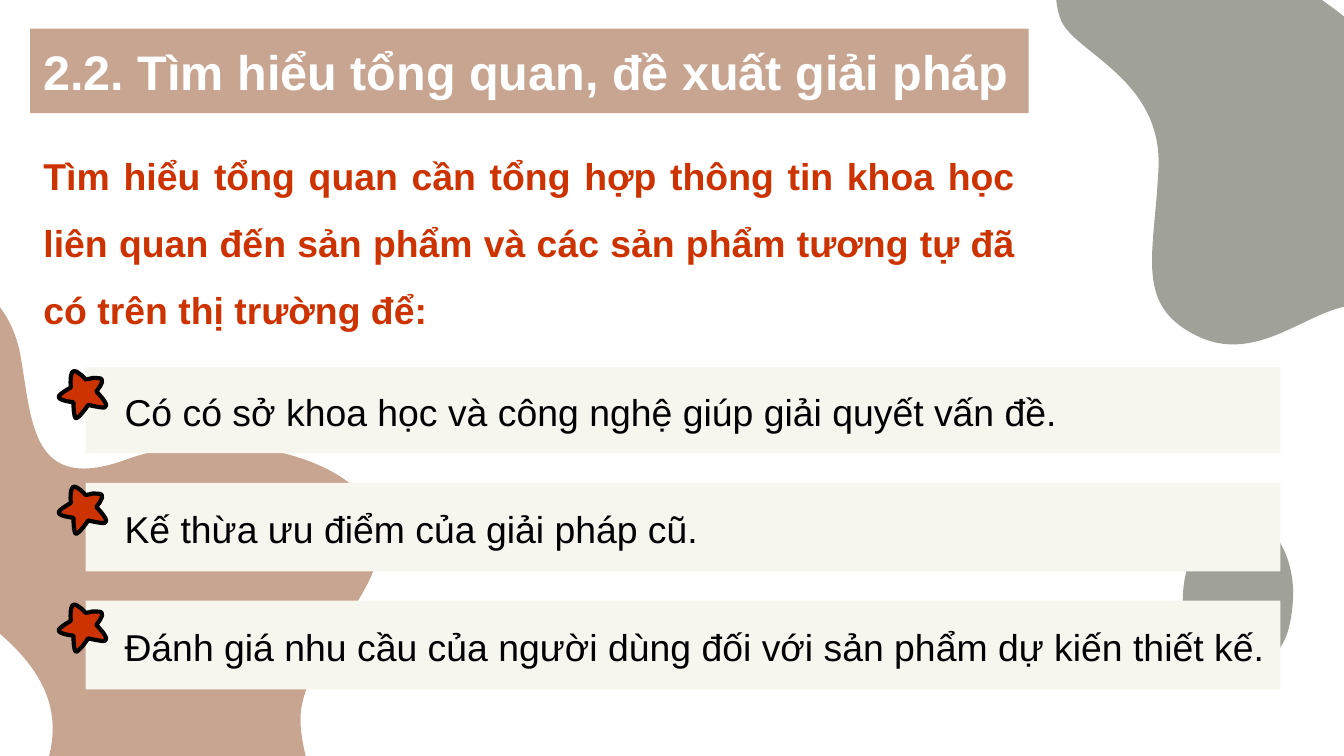
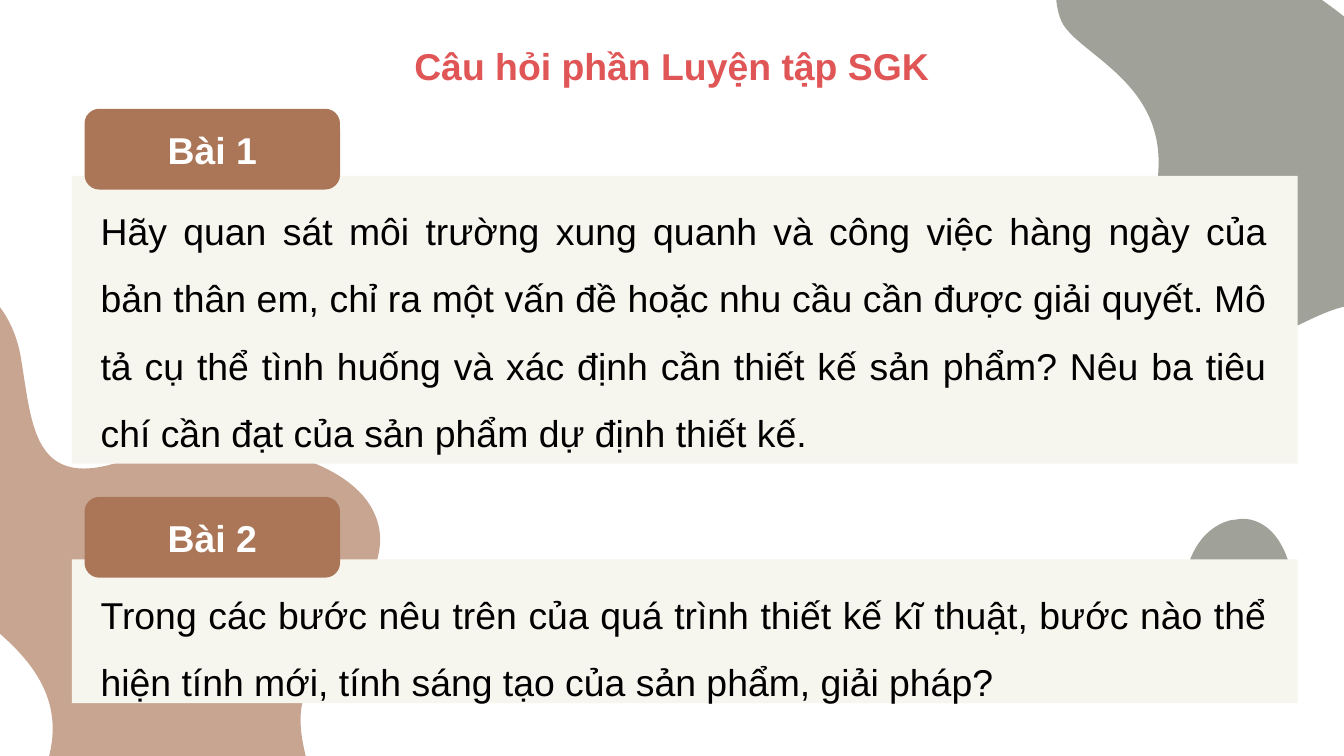
from math import cos, radians, sin
from lxml import etree
from pptx import Presentation, util as u
from pptx.dml.color import RGBColor
from pptx.enum import shapes as sh, text as tx
from pptx.oxml.ns import qn

WIDE = u.Inches(10)
HIGH = WIDE * 9 // 16
CELL = WIDE // 100
FONT = "Arial"

WHITE = RGBColor(0xFF, 0xFF, 0xFF)
BLACK = RGBColor(0, 0, 0)
TAN = RGBColor(0xC8, 0xA5, 0x91)
SAGE = RGBColor(0xA0, 0xA2, 0x99)
CREAM = RGBColor(0xF6, 0xF5, 0xEE)
RUST = RGBColor(0xCC, 0x33, 0x00)
CORAL = RGBColor(0xE0, 0x56, 0x56)
BROWN = RGBColor(0xAB, 0x76, 0x58)
EDGE = RGBColor(0xAB, 0x76, 0x57)

BLOBS = [
    (SAGE, (70.7, -1.8, 45.5, 28), 222.8, (78.9, 1.4), [
        (79.8, 3.9, 86.5, 5.8, 86.2, 12.5), (85.9, 19.1, 84.3, 22.8, 89.3, 25.1),
        (94.3, 27.3, 98.3, 21.8, 102.1, 22.8), (105.8, 23.8, 117.1, 20.2, 109.2, 10.3),
        (101.4, 0.5, 90.2, -6.2, 84.4, -5.7), (78.6, -5.3, 78, -1.1, 78.9, 1.4)]),
    (TAN, (-20.1, 20.2, 51.2, 46.5), 11.2, (1.6, 26.9), [
        (2.4, 31.7, 2.5, 36.7, 9.4, 34.2), (16.2, 31.7, 26, 33.7, 27.9, 38.3),
        (29.9, 42.8, 23.6, 47.4, 22.5, 52.3), (21.4, 57.1, 27.6, 63.9, 21.1, 66.4),
        (14.7, 69, 0.5, 64.5, 3.3, 57.4), (6, 50.2, -0.6, 46.6, -6.3, 42.5),
        (-12, 38.3, -17.1, 26.3, -10.2, 22.2), (-3.2, 18.1, 0.9, 22, 1.6, 26.9)]),
    (SAGE, (88, 38.6, 8.5, 11.1), 0, (92.4, 38.6), [
        (92.2, 38.6, 91.9, 38.7, 91.6, 38.7), (89.2, 39.3, 88, 41.9, 88, 44.8),
        (88, 47.8, 89.9, 49.5, 92.2, 49.7), (95.1, 49.5, 96, 47.7, 96.2, 44.7),
        (96.4, 42, 95.1, 38.6, 92.4, 38.6)]),
]
STAR = (-2.1, 0.2, 3.6, 3.5), 351.5, (-0.9, 0.3), [
    (-0.9, 0.3, -0.9, 0.3, -0.9, 0.3),
    (-1.2, 0.4, -1.1, 1.5, -1.1, 1.5), (-1.1, 1.5, -2, 2, -2, 2.2),
    (-2, 2.5, -0.9, 2.6, -0.9, 2.6), (-0.9, 2.6, -0.9, 3.8, -0.7, 3.8),
    (-0.7, 3.8, -0.7, 3.8, -0.7, 3.8),
    (-0.4, 3.7, 0.2, 2.8, 0.2, 2.8), (0.2, 2.8, 1, 3, 1.4, 3),
    (1.5, 2.9, 1.5, 2.9, 1.5, 2.9), (1.7, 2.7, 0.8, 1.8, 0.8, 1.8),
    (0.8, 1.8, 1.4, 1.1, 1.2, 0.9), (1.2, 0.8, 0.8, 0.8, 0.5, 0.8),
    (0.2, 0.9, 0, 0.9, 0, 0.9), (0, 0.9, -0.6, 0.2, -0.9, 0.3)]

HEAD = (2.25, 2.13, 74.3, 6.3)
INTRO = (2.25, 9.2, 74.3, 15.5)
AIMS = [
    (27.33, 6.4, 79.3, "Có có sở khoa học và công nghệ giúp giải quyết vấn đề."),
    (35.93, 6.6, 52, "Kế thừa ưu điểm của giải pháp cũ."),
    (44.7, 6.6, 87.7,
     "Đánh giá nhu cầu của người dùng đối với sản phẩm dự kiến thiết kế."),
]
TASKS = [
    ((5.35, 13.1, 91.2, 21.4), 8.25, "Bài 1",
     "Hãy quan sát môi trường xung quanh và công việc hàng ngày của bản thân em, "
     "chỉ ra một vấn đề hoặc nhu cầu cần được giải quyết. Mô tả cụ thể tình huống "
     "và xác định cần thiết kế sản phẩm? Nêu ba tiêu chí cần đạt của sản phẩm dự "
     "định thiết kế."),
    ((5.35, 41.63, 91.2, 10.7), 37.13, "Bài 2",
     "Trong các bước nêu trên của quá trình thiết kế kĩ thuật, bước nào thể hiện "
     "tính mới, tính sáng tạo của sản phẩm, giải pháp?"),
]


def place(box):
    """Turn a box in grid cells into slide lengths."""
    return [round(n * CELL) for n in box]


def paint(shape, fill, line=None):
    """Give a shape its fill and its outline, if any."""
    shape.shadow.inherit = False
    shape.fill.solid()
    shape.fill.fore_color.rgb = fill
    if line is None:
        shape.line.fill.background()
    else:
        shape.line.color.rgb = line
        shape.line.width = u.Pt(2.25)
    return shape


def panel(slide, box, fill, kind=sh.MSO_SHAPE.RECTANGLE, line=None):
    """Add a filled preset shape."""
    return paint(slide.shapes.add_shape(kind, *place(box)), fill, line)


def write(shape, words, color, size=20, bold=False,
          align=tx.PP_ALIGN.LEFT, gap=None):
    """Set the one paragraph of a shape."""
    frame = shape.text_frame
    frame.word_wrap = True
    frame.text = words
    para = frame.paragraphs[0]
    para.alignment = align
    para.line_spacing = gap
    font = para.runs[0].font
    font.name, font.size, font.bold = FONT, u.Pt(size), bold
    font.color.rgb = color
    return frame


def label(slide, box, words, color, **style):
    """Add a text box."""
    return write(slide.shapes.add_textbox(*place(box)), words, color, **style)


def center(frame, inset=None):
    """Anchor text in the middle, with equal insets if given."""
    frame.vertical_anchor = tx.MSO_ANCHOR.MIDDLE
    if inset is not None:
        frame.margin_top = frame.margin_bottom = inset


def unturn(x, y, box, turn):
    """Give a drawn point its place inside the unrotated box."""
    left, top, cols, rows = box
    dx, dy = x - left - cols / 2, y - top - rows / 2
    c, s = cos(radians(turn)), sin(radians(turn))
    return place((dx * c + dy * s + cols / 2, dy * c - dx * s + rows / 2))


def outline(slide, box, turn, start, curves, fill, line=None, shift=(0, 0)):
    """Draw a closed curved shape in a rotated box."""
    left, top, wide, high = place((box[0] + shift[0], box[1] + shift[1], *box[2:]))
    pen = slide.shapes.build_freeform(left, top)
    pen.add_line_segments([(left + wide, top), (left + wide, top + high),
                           (left, top + high)])
    shape = pen.convert_to_shape()
    route = next(shape.element.iter(qn("a:path")))
    for old in list(route):
        route.remove(old)
    for tag, nums in [("a:moveTo", start), *(("a:cubicBezTo", c) for c in curves)]:
        step = etree.SubElement(route, qn(tag))
        for x, y in zip(nums[::2], nums[1::2]):
            px, py = unturn(x, y, box, turn)
            etree.SubElement(step, qn("a:pt"), x=str(px), y=str(py))
    etree.SubElement(route, qn("a:close"))
    shape.rotation = turn
    return paint(shape, fill, line)


def backdrop(layout, slide):
    """Put the shared blobs on the layout."""
    for old in list(layout.placeholders):
        old.element.getparent().remove(old.element)
    tree = layout.shapes.element
    for fill, *form in BLOBS:
        tree.append(outline(slide, *form, fill).element)


def aim(slide, box, span, words):
    """Draw one starred row."""
    left, top, _, rows = box
    panel(slide, box, CREAM)
    frame = label(slide, (left + 1.1, top + rows / 2 - 2.1, span, 4.4), words, BLACK)
    center(frame)
    frame.margin_left, frame.margin_right = u.Inches(0.18), u.Inches(0.05)
    outline(slide, *STAR, RUST, BLACK, (left, top))


def survey(slide):
    """Build the slide on background research."""
    frame = write(panel(slide, HEAD, TAN),
                  "2.2. Tìm hiểu tổng quan, đề xuất giải pháp", WHITE, 26, True)
    center(frame, u.Inches(0.1))
    label(slide, INTRO,
          "Tìm hiểu tổng quan cần tổng hợp thông tin khoa học liên quan đến sản "
          "phẩm và các sản phẩm tương tự đã có trên thị trường để:",
          RUST, bold=True, align=tx.PP_ALIGN.JUSTIFY, gap=1.5)
    for top, rows, span, words in AIMS:
        aim(slide, (6.37, top, 88.9, rows), span, words)


def task(slide, box, rise, name, words):
    """Draw one exercise card with its text."""
    left, top, cols, rows = box
    panel(slide, box, CREAM)
    label(slide, (left + 1.15, top + 0.25, cols - 2.4, rows - 0.2), words, BLACK,
          align=tx.PP_ALIGN.JUSTIFY, gap=1.5)
    tag = panel(slide, (left + 1.1, rise, 18.7, 5.7), BROWN,
                sh.MSO_SHAPE.ROUNDED_RECTANGLE, EDGE)
    center(write(tag, name, WHITE, bold=True, align=tx.PP_ALIGN.CENTER))


def drill(slide):
    """Build the slide of exercises."""
    frame = label(slide, (0, 1.15, 100, 5.8), "Câu hỏi phần Luyện tập SGK", CORAL,
                  bold=True, align=tx.PP_ALIGN.CENTER, gap=1.5)
    center(frame, u.Inches(0.1))
    for item in TASKS:
        task(slide, *item)


def main():
    """Build and save the deck."""
    deck = Presentation()
    deck.slide_width, deck.slide_height = WIDE, HIGH
    blank = deck.slide_layouts[6]
    first = deck.slides.add_slide(blank)
    backdrop(blank, first)
    survey(first)
    drill(deck.slides.add_slide(blank))
    deck.save("out.pptx")


if __name__ == "__main__":
    main()
